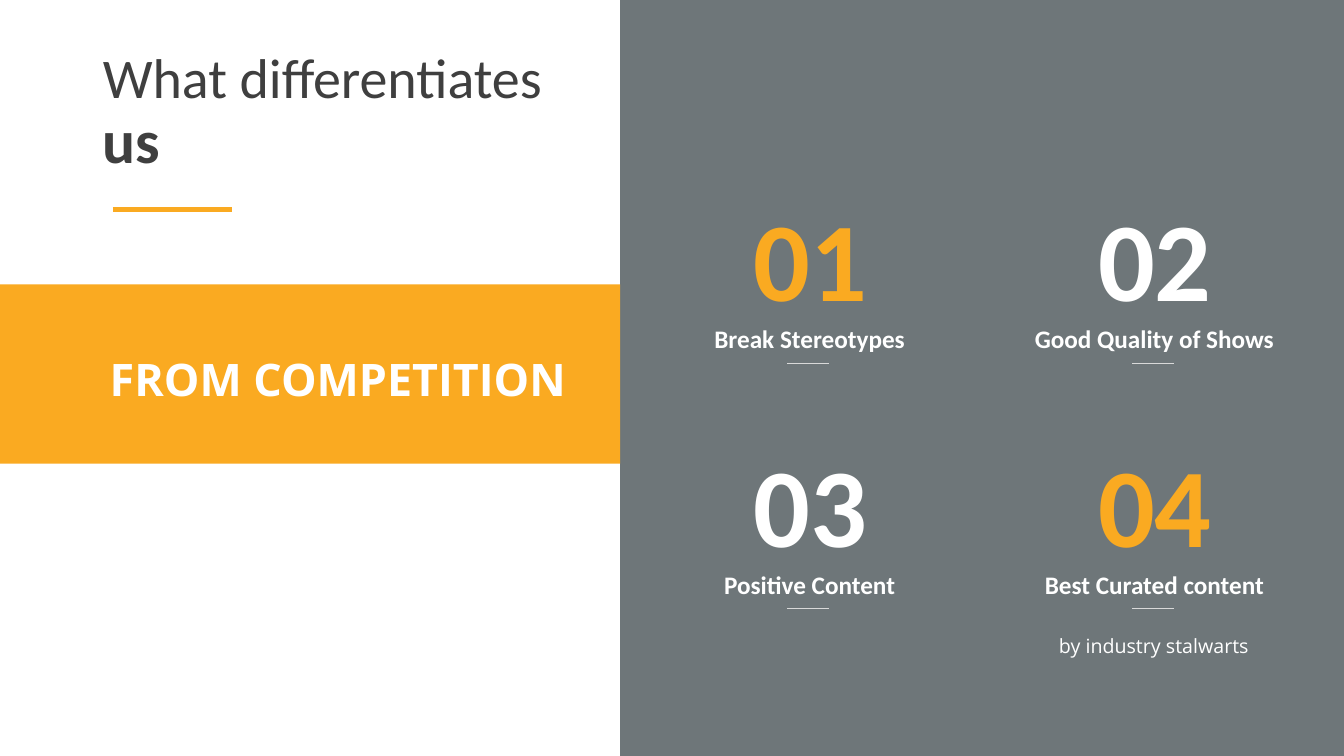
from lxml import etree
from pptx import Presentation
from pptx.dml.color import RGBColor
from pptx.enum.shapes import MSO_CONNECTOR, MSO_SHAPE
from pptx.enum.text import MSO_ANCHOR, MSO_AUTO_SIZE, PP_ALIGN
from pptx.oxml.ns import qn
from pptx.util import Inches, Pt

RECTANGLE = MSO_SHAPE.RECTANGLE
STRAIGHT = MSO_CONNECTOR.STRAIGHT
MIDDLE = MSO_ANCHOR.MIDDLE
GROW = MSO_AUTO_SIZE.SHAPE_TO_FIT_TEXT
NO_FIT = MSO_AUTO_SIZE.NONE
LEFT, CENTER, JUSTIFY = PP_ALIGN.LEFT, PP_ALIGN.CENTER, PP_ALIGN.JUSTIFY

ORANGE = RGBColor(0xFA, 0xAA, 0x21)
SLATE = RGBColor(0x31, 0x3C, 0x41)
CHARCOAL = RGBColor(0x3F, 0x3F, 0x3F)
SILVER = RGBColor(0xD9, 0xD9, 0xD9)
WHITE = RGBColor(0xFF, 0xFF, 0xFF)

TITLE_ONLY = 5
COLUMN_CENTERS = (8.03, 11.45)
ROW_TOPS = (1.83, 4.27)
POINTS = [
    ("01", "Break Stereotypes", ORANGE),
    ("02", "Good Quality of Shows", WHITE),
    ("03", "Positive Content", WHITE),
    ("04", "Best Curated content", ORANGE),
]


class SlideBuilder:
    heading_font = "Calibri"
    body_font = "Open Sans"

    def __init__(self, presentation):
        self.slide = presentation.slides.add_slide(presentation.slide_layouts[TITLE_ONLY])
        self.shapes = self.slide.shapes

    def title(self, first_line, bold_line, left, top, width, height):
        title = self.shapes.title
        title.left, title.top = Inches(left), Inches(top)
        title.width, title.height = Inches(width), Inches(height)
        frame = title.text_frame
        frame.vertical_anchor = MIDDLE
        frame.auto_size = NO_FIT
        paragraph = frame.paragraphs[0]
        paragraph.alignment = LEFT
        paragraph.line_spacing = 0.9
        paragraph.font.name = self.heading_font
        paragraph.font.color.rgb = CHARCOAL
        first = paragraph.add_run()
        first.text = first_line
        first.font.size = Pt(40)
        paragraph.add_line_break()
        second = paragraph.add_run()
        second.text = bold_line
        second.font.size = Pt(44)
        second.font.bold = True

    def panel(self, left, top, width, height, color, opacity=100):
        """Add a borderless rectangle; opacity is in percent."""
        shape = self.shapes.add_shape(
            RECTANGLE, Inches(left), Inches(top), Inches(width), Inches(height))
        shape.shadow.inherit = False
        shape.line.fill.background()
        shape.fill.solid()
        shape.fill.fore_color.rgb = color
        if opacity < 100:
            color_element = shape._element.spPr.find(qn("a:solidFill"))[0]
            etree.SubElement(color_element, qn("a:alpha"), val=str(opacity * 1000))

    def rule(self, left, top, width, color, weight):
        line = self.shapes.add_connector(
            STRAIGHT, Inches(left), Inches(top), Inches(left + width), Inches(top))
        line.line.color.rgb = color
        line.line.width = Pt(weight)
        etree.SubElement(line._element.spPr, qn("a:effectLst"))

    def text(self, content, left, top, width, height, font, size, color=WHITE,
             bold=True, alignment=CENTER, spacing=None, wrap=False, fit=GROW, insets=None):
        box = self.shapes.add_textbox(
            Inches(left), Inches(top), Inches(width), Inches(height))
        frame = box.text_frame
        frame.word_wrap = wrap
        frame.auto_size = fit
        if insets:
            horizontal, vertical = insets
            frame.margin_left = frame.margin_right = Inches(horizontal)
            frame.margin_top = frame.margin_bottom = Inches(vertical)
        paragraph = frame.paragraphs[0]
        paragraph.text = content
        paragraph.alignment = alignment
        paragraph.line_spacing = spacing
        paragraph.font.name = font
        paragraph.font.size = Pt(size)
        paragraph.font.bold = bold
        paragraph.font.color.rgb = color

    def point(self, number, caption, color, center, top):
        """Add a large number, its caption and the short rule below them."""
        self.text(number, center - 0.72, top, 1.45, 1.45, self.heading_font, 80, color)
        self.text(caption, center - 1.49, top + 1.26, 2.98, 0.44,
                  self.heading_font, 18, spacing=Pt(26.8))
        self.rule(center - 0.22, top + 1.77, 0.41, SILVER, 0.5)


def main():
    presentation = Presentation()
    presentation.slide_width = Inches(13.33)
    presentation.slide_height = Inches(7.5)

    builder = SlideBuilder(presentation)
    builder.rule(1.12, 2.08, 1.18, ORANGE, 3.5)
    builder.title("What differentiates", "us", 0.92, 0.4, 11.5, 1.45)
    builder.panel(6.15, 0, 7.19, 7.5, SLATE, opacity=70)
    builder.panel(0, 2.82, 6.15, 1.78, ORANGE)
    builder.text("FROM COMPETITION", 0.99, 3.17, 5.16, 1.14, builder.body_font, 32,
                 alignment=JUSTIFY, spacing=1.5, wrap=True, fit=NO_FIT)

    for index, (number, caption, color) in enumerate(POINTS):
        row, column = divmod(index, len(COLUMN_CENTERS))
        builder.point(number, caption, color, COLUMN_CENTERS[column], ROW_TOPS[row])
    builder.text("by industry stalwarts", 10.08, 6.05, 2.73, 0.59, builder.body_font, 14,
                 bold=False, spacing=1.5, wrap=True, insets=(0.24, 0.12))

    presentation.save("out.pptx")


if __name__ == "__main__":
    main()
